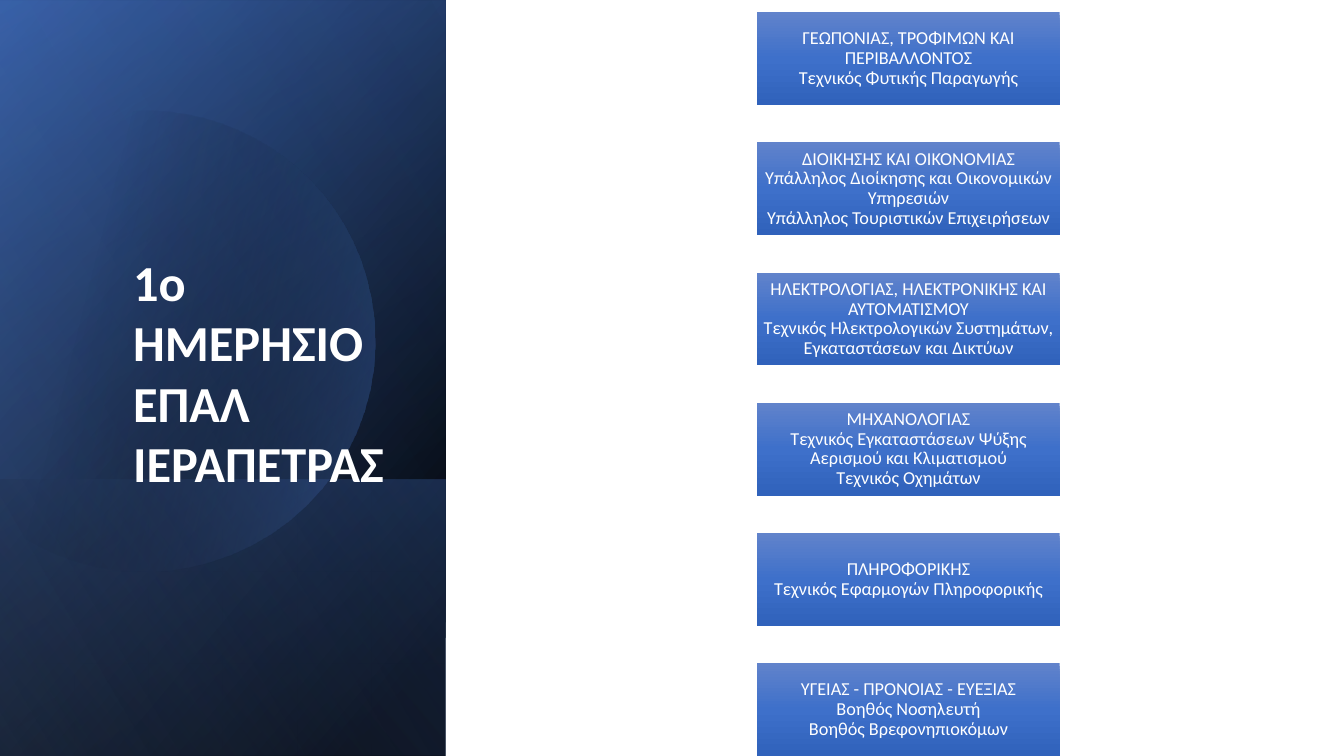
from dataclasses import dataclass

from lxml import etree
from pptx import Presentation
from pptx.dml.color import RGBColor
from pptx.enum.shapes import MSO_SHAPE
from pptx.enum.text import MSO_ANCHOR, MSO_AUTO_SIZE, PP_ALIGN
from pptx.oxml.ns import qn
from pptx.shapes.autoshape import Shape
from pptx.slide import Slide
from pptx.util import Inches, Pt

RECT = MSO_SHAPE.RECTANGLE
TOP, MIDDLE = MSO_ANCHOR.TOP, MSO_ANCHOR.MIDDLE
LEFT, CENTER = PP_ALIGN.LEFT, PP_ALIGN.CENTER
GROW = MSO_AUTO_SIZE.SHAPE_TO_FIT_TEXT

FONT = "Calibri"
WHITE = RGBColor(0xFF, 0xFF, 0xFF)
BLACK = RGBColor(0x00, 0x00, 0x00)
BLUE = RGBColor(0x44, 0x72, 0xC4)
DARK_BLUE = RGBColor(0x2F, 0x55, 0x97)
PALE_BLUE = RGBColor(0x8F, 0xAA, 0xDC)
BOX_TOP = RGBColor(0x61, 0x83, 0xCB)
BOX_MIDDLE = RGBColor(0x3E, 0x70, 0xCA)
BOX_BOTTOM = RGBColor(0x30, 0x62, 0xBB)


@dataclass(frozen=True)
class Stop:
    position: int
    color: RGBColor
    opacity: int = 100


@dataclass(frozen=True)
class Gradient:
    angle: int
    stops: tuple[Stop, ...]


@dataclass(frozen=True)
class Panel:
    left: float
    top: float
    width: float
    height: float
    gradient: Gradient


Point = tuple[float, float]

BACK_PANELS = (
    Panel(-1.54, 1.54, 7.5, 4.42, Gradient(50, (Stop(8, BLACK), Stop(100, DARK_BLUE)))),
    Panel(-1.54, 1.55, 7.5, 4.42, Gradient(30, (Stop(0, BLACK, 0), Stop(99, BLUE, 46)))),
    Panel(0.84, 3.92, 2.74, 4.42, Gradient(130, (Stop(2, BLUE, 29), Stop(100, BLACK, 30)))),
)
FRONT_PANEL = Panel(-1.54, 1.54, 7.5, 4.42,
                    Gradient(120, (Stop(0, BLACK, 0), Stop(99, PALE_BLUE, 11))))

# The disc is cut off at the left; each curve is two control points and an end point.
DISC_START: Point = (1.49, 1.1)
DISC_RIGHT = (
    ((2.46, 1.12), (3.35, 1.77), (3.63, 2.75)),
    ((3.98, 3.97), (3.28, 5.23), (2.07, 5.58)),
    ((1.31, 5.8), (0.53, 5.61), (-0.03, 5.14)),
)
DISC_CUT = ((-0.15, 5.03), (-0.15, 1.75), (0, 1.61))
DISC_LEFT = (
    ((0.23, 1.42), (0.5, 1.28), (0.8, 1.19)),
    ((1.03, 1.13), (1.26, 1.1), DISC_START),
)
DISC_GRADIENT = Gradient(14, (Stop(29, BLACK, 0), Stop(100, BLUE, 43)))
CURVE_STEPS = 16

BOX_GRADIENT = Gradient(90, (Stop(0, BOX_TOP), Stop(50, BOX_MIDDLE), Stop(100, BOX_BOTTOM)))
BOX_LEFT, BOX_FIRST_TOP, BOX_WIDTH, BOX_HEIGHT = 7.51, 0.12, 3, 0.92
BOX_PITCH = 1.292
BOX_INSET = 0.01

TITLE = "1ο ΗΜΕΡΗΣΙΟ ΕΠΑΛ\vΙΕΡΑΠΕΤΡΑΣ"
SECTORS = (
    ("ΓΕΩΠΟΝΙΑΣ, ΤΡΟΦΙΜΩΝ ΚΑΙ ΠΕΡΙΒΑΛΛΟΝΤΟΣ", "Τεχνικός Φυτικής Παραγωγής"),
    ("ΔΙΟΙΚΗΣΗΣ ΚΑΙ ΟΙΚΟΝΟΜΙΑΣ", "Υπάλληλος Διοίκησης και Οικονομικών Υπηρεσιών",
     "Υπάλληλος Τουριστικών Επιχειρήσεων"),
    ("ΗΛΕΚΤΡΟΛΟΓΙΑΣ, ΗΛΕΚΤΡΟΝΙΚΗΣ ΚΑΙ ΑΥΤΟΜΑΤΙΣΜΟΥ",
     "Τεχνικός Ηλεκτρολογικών Συστημάτων, Εγκαταστάσεων και Δικτύων"),
    ("ΜΗΧΑΝΟΛΟΓΙΑΣ", "Τεχνικός Εγκαταστάσεων Ψύξης Αερισμού και Κλιματισμού",
     "Τεχνικός Οχημάτων"),
    ("ΠΛΗΡΟΦΟΡΙΚΗΣ", "Τεχνικός Εφαρμογών Πληροφορικής"),
    ("ΥΓΕΙΑΣ - ΠΡΟΝΟΙΑΣ - ΕΥΕΞΙΑΣ", "Βοηθός Νοσηλευτή", "Βοηθός Βρεφονηπιοκόμων"),
)


def paint(sp: Shape, gradient: Gradient) -> None:
    """Give a shape a gradient fill, with no line or shadow."""
    sp.shadow.inherit = False
    sp.line.fill.background()
    sp.fill.background()
    grad = etree.Element(qn("a:gradFill"), rotWithShape="1")
    stops = etree.SubElement(grad, qn("a:gsLst"))
    for stop in gradient.stops:
        gs = etree.SubElement(stops, qn("a:gs"), pos=str(stop.position * 1000))
        color = etree.SubElement(gs, qn("a:srgbClr"), val=str(stop.color))
        if stop.opacity < 100:
            etree.SubElement(color, qn("a:alpha"), val=str(stop.opacity * 1000))
    etree.SubElement(grad, qn("a:lin"), ang=str(gradient.angle * 60000), scaled="0")
    props = sp._element.spPr
    props.replace(props.find(qn("a:noFill")), grad)


def write(sp: Shape, text: str, size: int, bold: bool, align: PP_ALIGN,
          anchor: MSO_ANCHOR, spacing: float) -> None:
    tf = sp.text_frame
    tf.word_wrap = True
    tf.vertical_anchor = anchor
    tf.text = text
    p = tf.paragraphs[0]
    p.alignment = align
    p.line_spacing = spacing
    for r in p.runs:
        r.font.name = FONT
        r.font.size = Pt(size)
        r.font.bold = bold
        r.font.color.rgb = WHITE


def add_panel(slide: Slide, panel: Panel) -> None:
    """Add a mirrored rectangle standing on its side."""
    sp = slide.shapes.add_shape(RECT, Inches(panel.left), Inches(panel.top),
                                Inches(panel.width), Inches(panel.height))
    sp.rotation = 90
    sp._element.spPr.find(qn("a:xfrm")).set("flipH", "1")
    paint(sp, panel.gradient)


def curve_points(start: Point, curves: tuple[tuple[Point, ...], ...]) -> list[Point]:
    """Sample a chain of cubic curves."""
    points = []
    for c1, c2, end in curves:
        for step in range(1, CURVE_STEPS + 1):
            t = step / CURVE_STEPS
            u = 1 - t
            weights = (u ** 3, 3 * u * u * t, 3 * u * t * t, t ** 3)
            corners = (start, c1, c2, end)
            points.append((sum(w * x for w, (x, _) in zip(weights, corners)),
                           sum(w * y for w, (_, y) in zip(weights, corners))))
        start = end
    return points


def add_disc(slide: Slide) -> None:
    outline = [*curve_points(DISC_START, DISC_RIGHT), *DISC_CUT,
               *curve_points(DISC_CUT[-1], DISC_LEFT)]
    builder = slide.shapes.build_freeform(*map(Inches, DISC_START))
    builder.add_line_segments([(Inches(x), Inches(y)) for x, y in outline])
    paint(builder.convert_to_shape(), DISC_GRADIENT)


def add_sector(slide: Slide, index: int, lines: tuple[str, ...]) -> None:
    sp = slide.shapes.add_shape(RECT, Inches(BOX_LEFT), Inches(BOX_FIRST_TOP + index * BOX_PITCH),
                                Inches(BOX_WIDTH), Inches(BOX_HEIGHT))
    paint(sp, BOX_GRADIENT)
    tf = sp.text_frame
    tf.margin_left = tf.margin_right = tf.margin_top = tf.margin_bottom = Inches(BOX_INSET)
    write(sp, "\v".join(lines), 13, False, CENTER, MIDDLE, 0.9)


def place_title(slide: Slide) -> None:
    """Fill the title and bring it in front of the panels."""
    title = slide.shapes.title
    title.left, title.top = Inches(1.22), Inches(2.44)
    title.width, title.height = Inches(3), Inches(1.92)
    write(title, TITLE, 36, True, LEFT, TOP, 1.0)
    title.text_frame.auto_size = GROW
    slide.shapes._spTree.append(title._element)


def main() -> None:
    prs = Presentation()
    prs.slide_width, prs.slide_height = Inches(13.33), Inches(7.5)
    slide = prs.slides.add_slide(prs.slide_layouts.get_by_name("Title Only"))
    for panel in BACK_PANELS:
        add_panel(slide, panel)
    add_disc(slide)
    add_panel(slide, FRONT_PANEL)
    for index, lines in enumerate(SECTORS):
        add_sector(slide, index, lines)
    place_title(slide)
    prs.save("out.pptx")


if __name__ == "__main__":
    main()
